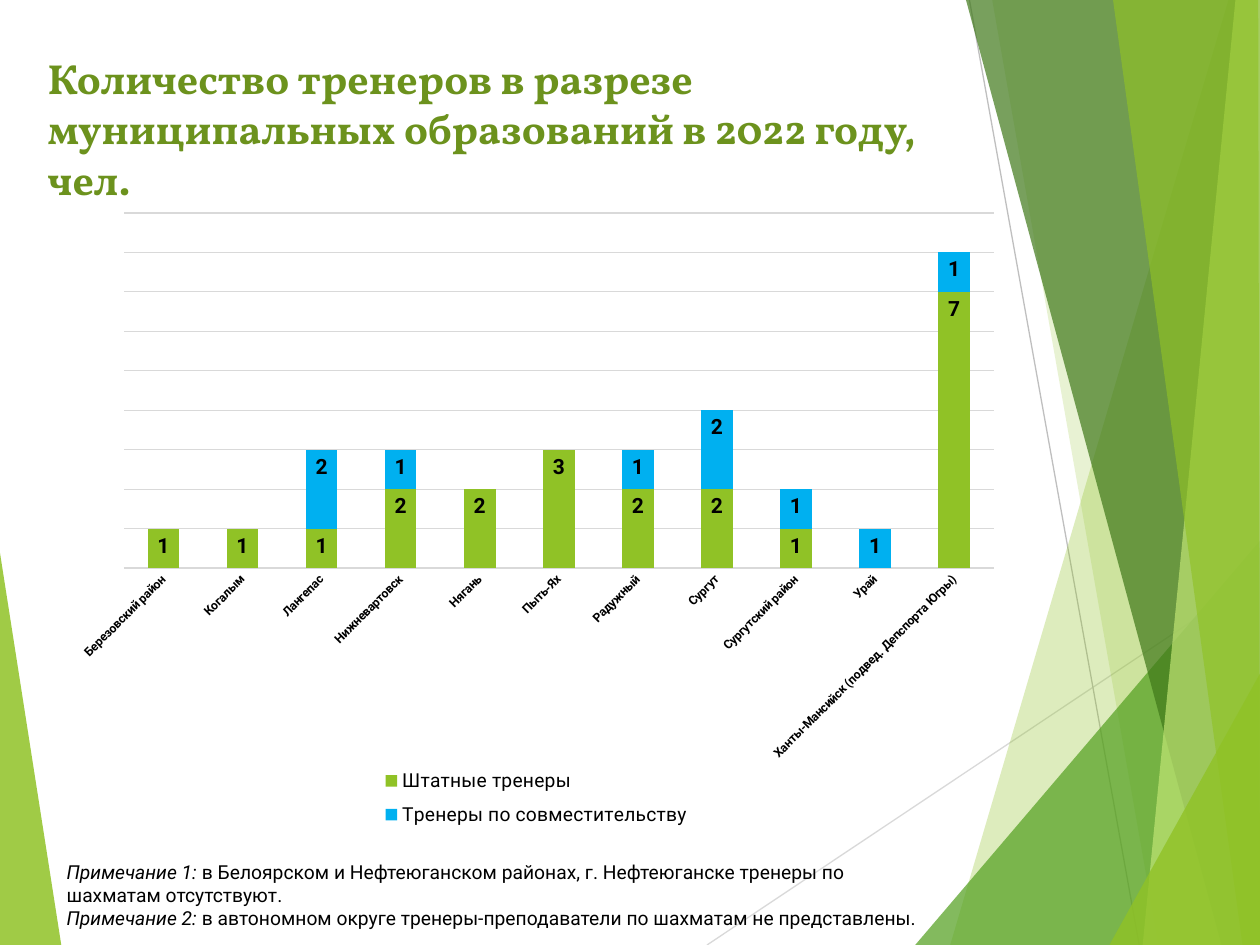
from dataclasses import dataclass

from lxml import etree
from pptx import Presentation
from pptx.chart.data import CategoryChartData
from pptx.dml.color import RGBColor
from pptx.enum.chart import XL_CHART_TYPE, XL_LABEL_POSITION, XL_LEGEND_POSITION, XL_TICK_MARK
from pptx.enum.shapes import MSO_CONNECTOR
from pptx.enum.text import MSO_ANCHOR, PP_ALIGN
from pptx.oxml import parse_xml
from pptx.oxml.ns import nsdecls, qn
from pptx.util import Pt

STACKED = XL_CHART_TYPE.COLUMN_STACKED
INSIDE_END = XL_LABEL_POSITION.INSIDE_END
LEGEND_BOTTOM = XL_LEGEND_POSITION.BOTTOM
NO_TICKS = XL_TICK_MARK.NONE
STRAIGHT = MSO_CONNECTOR.STRAIGHT
MIDDLE = MSO_ANCHOR.MIDDLE
LEFT = PP_ALIGN.LEFT


@dataclass(frozen=True)
class Theme:
    heading_font: str = "Vollkorn"
    body_font: str = "Roboto"
    title_color: str = "6C921D"
    text_color: str = "000000"
    lime: str = "90C226"
    green: str = "54A021"
    dark_green: str = "3F7819"
    pale_lime: str = "C0E474"
    blue: str = "00B0F0"
    grid: str = "D9D9D9"
    dark_line: str = "BFBFBF"
    title_size: float = 24
    body_size: float = 11
    label_size: float = 12
    chart_size: float = 10
    category_size: float = 7
    line_width: float = 0.75


THEME = Theme()

FACETS = [
    ([(0, 316), (35, 540), (0, 540)], THEME.lime, 85),
    ([(702, 0), (543, 540), (720, 540), (720, 0)], THEME.lime, 30),
    ([(567, 0), (662, 540), (720, 540), (720, 0)], THEME.lime, 20),
    ([(523, 540), (720, 309), (720, 540)], THEME.green, 72),
    ([(552, 0), (698, 540), (720, 540), (720, 0)], THEME.dark_green, 70),
    ([(706, 0), (653, 540), (720, 540), (720, 0)], THEME.pale_lime, 70),
    ([(636, 0), (710, 540), (720, 540), (719, 0)], THEME.lime, 65),
    ([(634, 540), (720, 385), (720, 540)], THEME.lime, 80),
]

CITIES = [
    "Березовский район", "Когалым", "Лангепас", "Нижневартовск", "Нягань", "Пыть-Ях",
    "Радужный", "Сургут", "Сургутский район", "Урай",
    "Ханты-Мансийск (подвед. Депспорта Югры)",
]
COACHES = [
    ("Штатные тренеры", [1, 1, 1, 2, 2, 3, 2, 2, 1, None, 7], THEME.lime),
    ("Тренеры по совместительству",
     [None, None, 2, 1, None, None, 1, 2, 1, 1, 1], THEME.blue),
]
NOTES = [
    ("Примечание 1:", " в Белоярском и Нефтеюганском районах, г. Нефтеюганске "
     "тренеры по шахматам отсутствуют."),
    ("Примечание 2:", " в автономном округе тренеры-преподаватели по шахматам "
     "не представлены."),
]


def format_font(font, size, name=THEME.body_font, color=THEME.text_color,
                bold=False, italic=False):
    font.name = name
    font.size = Pt(size)
    font.bold = bold
    font.italic = italic
    font.color.rgb = RGBColor.from_string(color)


def add_text(paragraph, text, **style):
    run = paragraph.add_run()
    run.text = text
    format_font(run.font, **style)


def set_layout(parent, index, target, **fractions):
    for old_layout in parent.findall(qn("c:layout")):
        parent.remove(old_layout)
    values = "".join(f'<c:{key} val="{value}"/>' for key, value in fractions.items())
    modes = '<c:xMode val="edge"/><c:yMode val="edge"/>'
    parent.insert(index, parse_xml(
        f'<c:layout {nsdecls("c")}><c:manualLayout>{target}{modes}{values}'
        '</c:manualLayout></c:layout>'))


class SlideBuilder:
    def __init__(self, slide, theme):
        self.slide = slide
        self.theme = theme

    def format_line(self, line, color):
        line.color.rgb = RGBColor.from_string(color)
        line.width = Pt(self.theme.line_width)

    def facet(self, points, color, opacity):
        corners = [(Pt(x), Pt(y)) for x, y in points]
        builder = self.slide.shapes.build_freeform(*corners[0])
        builder.add_line_segments(corners[1:], close=True)
        shape = builder.convert_to_shape()
        shape.shadow.inherit = False
        shape.line.fill.background()
        shape.fill.solid()
        shape.fill.fore_color.rgb = RGBColor.from_string(color)
        color_element = shape._element.spPr.find(".//" + qn("a:srgbClr"))
        etree.SubElement(color_element, qn("a:alpha")).set("val", str(opacity * 1000))

    def line(self, start, end, color):
        connector = self.slide.shapes.add_connector(
            STRAIGHT, *(Pt(value) for value in (*start, *end)))
        self.format_line(connector.line, color)
        etree.SubElement(connector._element.spPr, qn("a:effectLst"))

    def title(self, text, left, top, width, height):
        shape = self.slide.shapes.title
        shape.left, shape.top, shape.width, shape.height = map(Pt, (left, top, width, height))
        shape.text_frame.word_wrap = True
        shape.text_frame.vertical_anchor = MIDDLE
        paragraph = shape.text_frame.paragraphs[0]
        paragraph.alignment = LEFT
        paragraph.line_spacing = Pt(29)
        add_text(paragraph, text, size=self.theme.title_size, bold=True,
                 name=self.theme.heading_font, color=self.theme.title_color)

    def notes(self, notes, left, top, width, height):
        shape = self.slide.shapes.add_textbox(*map(Pt, (left, top, width, height)))
        frame = shape.text_frame
        frame.word_wrap = True
        for index, (label, text) in enumerate(notes):
            paragraph = frame.add_paragraph() if index else frame.paragraphs[0]
            add_text(paragraph, label, size=self.theme.body_size, italic=True)
            add_text(paragraph, text, size=self.theme.body_size)

    def chart(self, categories, series_list, left, top, width, height):
        data = CategoryChartData()
        data.categories = categories
        for name, values, _ in series_list:
            data.add_series(name, values)
        chart = self.slide.shapes.add_chart(
            STACKED, *map(Pt, (left, top, width, height)), data).chart
        chart.has_title = False
        format_font(chart.font, self.theme.chart_size)
        self.format_axes(chart)
        self.format_legend(chart)
        plot = chart.plots[0]
        plot.gap_width = 150
        plot.overlap = 100
        plot.vary_by_categories = False
        for series, (_, _, color) in zip(plot.series, series_list):
            series.format.fill.solid()
            series.format.fill.fore_color.rgb = RGBColor.from_string(color)
            labels = series.data_labels
            labels.show_value = True
            labels.position = INSIDE_END
            format_font(labels.font, self.theme.label_size, bold=True)
        plot_area = chart._chartSpace.chart.plotArea
        set_layout(plot_area, 0, '<c:layoutTarget val="inner"/>',
                   x=0.086, y=0.033, w=0.894, h=0.551)

    def format_axes(self, chart):
        value_axis = chart.value_axis
        value_axis.minimum_scale = 0
        value_axis.maximum_scale = 9
        value_axis.major_unit = 1
        value_axis.visible = False
        self.format_line(value_axis.major_gridlines.format.line, self.theme.grid)
        category_axis = chart.category_axis
        category_axis.major_tick_mark = NO_TICKS
        self.format_line(category_axis.format.line, self.theme.grid)
        format_font(category_axis.tick_labels.font, self.theme.category_size, bold=True)
        category_axis._element.find(".//" + qn("a:bodyPr")).set("rot", "-2700000")

    def format_legend(self, chart):
        chart.has_legend = True
        legend = chart.legend
        legend.position = LEGEND_BOTTOM
        legend.include_in_layout = False
        format_font(legend.font, self.theme.body_size)
        set_layout(legend._element, 1, "", x=0.31, y=0.88, w=0.4, h=0.12)


def main():
    presentation = Presentation()
    presentation.slide_width = Pt(720)
    presentation.slide_height = Pt(540)
    slide = presentation.slides.add_slide(presentation.slide_layouts[5])
    builder = SlideBuilder(slide, THEME)
    builder.line((404, 540), (720, 329), THEME.grid)
    builder.line((554, 0), (651, 540), THEME.dark_line)
    for points, color, opacity in FACETS:
        builder.facet(points, color, opacity)
    builder.title("Количество тренеров в разрезе муниципальных образований в 2022 году, чел.",
                  20, 28, 562, 90)
    builder.chart(CITIES, COACHES, 23, 109.5, 556, 368.5)
    builder.notes(NOTES, 31, 488, 510.5, 47.5)
    presentation.save("out.pptx")


if __name__ == "__main__":
    main()
